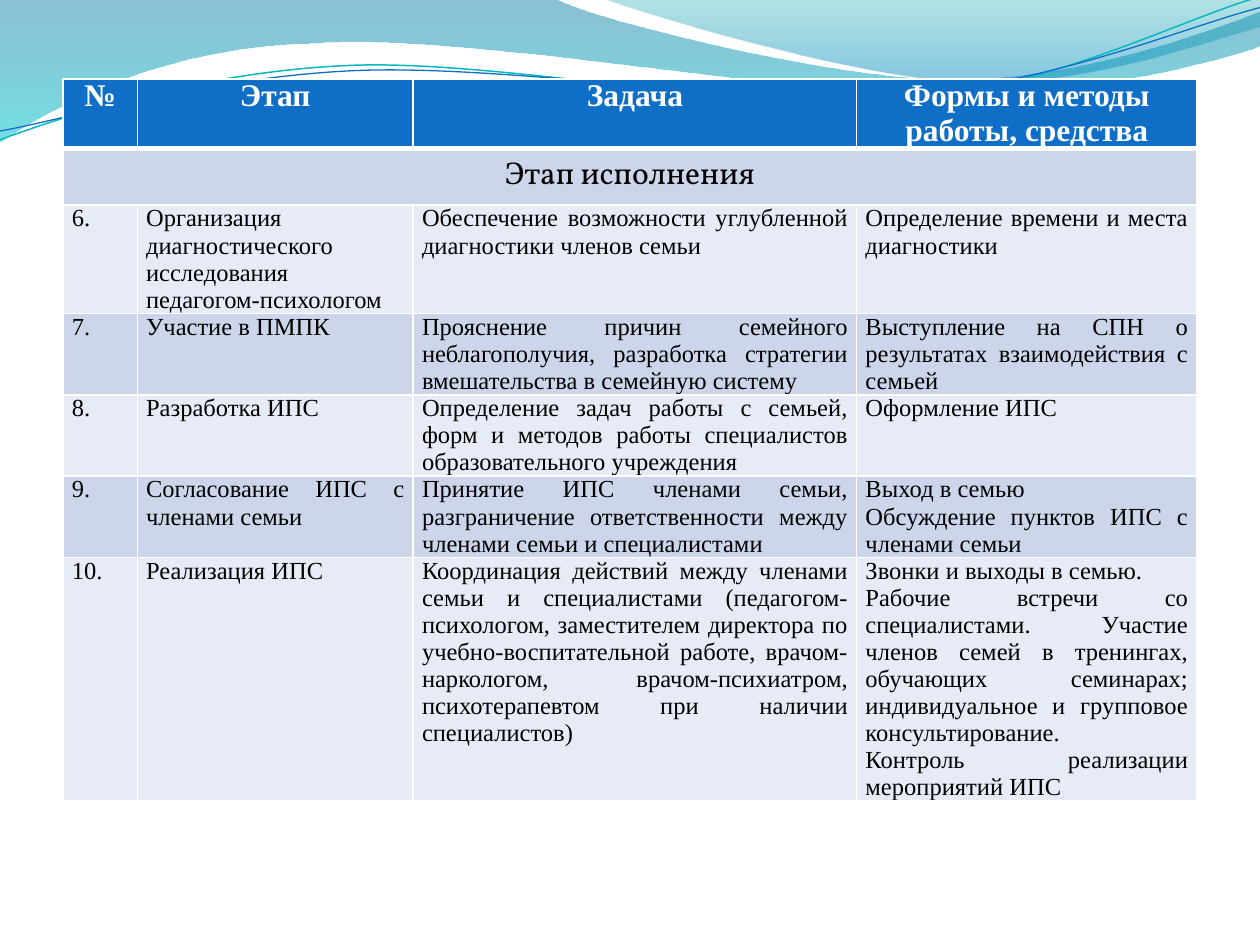
import math

from lxml import etree
from pptx import Presentation
from pptx.dml.color import RGBColor
from pptx.enum import text
from pptx.oxml import ns
from pptx.util import Inches, Pt

THEME = {
    "head_fill": "0F6FC6", "bands": ("CCD5EA", "E7EBF5"),
    "white": "FFFFFF", "black": "000000",
    "font": "Times New Roman", "section_font": "Vollkorn",
    "head_size": 18, "body_size": 14,
}

HEADINGS = ["№", "Этап", "Задача", "Формы и методы работы, средства"]
SECTION = "Этап исполнения"
STAGES = [
    ("6.", "Организация диагностического исследования педагогом-психологом",
     "Обеспечение возможности углубленной диагностики членов семьи",
     "Определение времени и места диагностики"),
    ("7.", "Участие в ПМПК",
     "Прояснение причин семейного неблагополучия, разработка стратегии "
     "вмешательства в семейную систему",
     "Выступление на СПН о результатах взаимодействия с семьей"),
    ("8.", "Разработка ИПС",
     "Определение задач работы с семьей, форм и методов работы специалистов "
     "образовательного учреждения",
     "Оформление ИПС"),
    ("9.", "Согласование ИПС с членами семьи",
     "Принятие ИПС членами семьи, разграничение ответственности между "
     "членами семьи и специалистами",
     "Выход в семью\nОбсуждение пунктов ИПС с членами семьи"),
    ("10.", "Реализация ИПС",
     "Координация действий между членами семьи и специалистами "
     "(педагогом-психологом, заместителем директора по учебно-воспитательной "
     "работе, врачом-наркологом, врачом-психиатром, психотерапевтом при "
     "наличии специалистов)",
     "Звонки и выходы в семью.\n"
     "Рабочие встречи со специалистами. Участие членов семей в тренингах, "
     "обучающих семинарах; индивидуальное и групповое консультирование.\n"
     "Контроль реализации мероприятий ИПС"),
]
TABLE_BOX = (Inches(0.5), Pt(45), Inches(9), Inches(6.14))
COLUMN_WIDTHS = [0.59, 2.19, 3.52, 2.7]
ROW_HEIGHT = 0.41

# Each step is an end point (2 numbers) or a Bezier curve (6 numbers), in inches
# on the slide. Gradient stops are position, colour, opacity in percent.
WAVES = [
    {"box": (-0.01, -0.01, 10.02, 1.14), "start": (0, 0),
     "steps": [(4.4, -0.01), (4.76, 0.17, 6.64, 0.63, 7.58, 0.63),
               (8.53, 0.63, 9.58, 0.26, 10, 0.09), (10.01, 0.36),
               (9.83, 0.44, 8.7, 0.76, 7.46, 0.75),
               (6.22, 0.75, 3.82, 0.28, 2.57, 0.34),
               (1.29, 0.36, 0.46, 0.83, -0.01, 1.13), (0, 0)],
     "gradient": [(0, "0074A1", 45), (1, "00C6CF", 55)]},
    {"box": (4.79, -0.01, 5.21, 0.7), "start": (4.79, -0.01),
     "steps": [(5.09, 0.11, 6.82, 0.62, 7.69, 0.65),
               (8.56, 0.69, 9.61, 0.32, 10, 0.21), (10, 0), (4.79, -0.01)],
     "gradient": [(0, "00A1A9", 30), (0.8, "008BBF", 45)]},
    {"box": (-0.02, 0.22, 10.02, 0.71), "turn": 357.3, "start": (0, 1.11),
     "steps": [(0.48, 0.93, 1.58, 0.57, 2.77, 0.52),
               (3.95, 0.47, 5.93, 0.89, 7.13, 0.8),
               (8.33, 0.71, 9.38, 0.15, 9.98, -0.02)],
     "line": ("0AB8BF", 0.85)},
    {"box": (-0.02, 0.3, 10.03, 0.58), "turn": 357.3, "start": (0, 1.04),
     "steps": [(0.47, 0.96, 1.64, 0.61, 2.83, 0.56),
               (4.03, 0.51, 5.97, 0.84, 7.17, 0.75),
               (8.36, 0.67, 9.41, 0.21, 10, 0.06)],
     "line": ("0F6FC6", 0.75)},
]


def rgb(value):
    return RGBColor.from_string(value)


def draw_curves(shape, wave):
    """Place the shape on its box and give its path true Bezier curves."""
    left, top, width, height = wave["box"]
    angle = math.radians(-wave.get("turn", 0))
    cos, sin = math.cos(angle), math.sin(angle)

    def local(x, y):
        dx, dy = x - left - width / 2, y - top - height / 2
        return (Inches(dx * cos - dy * sin + width / 2),
                Inches(dx * sin + dy * cos + height / 2))

    for side, value in zip(("left", "top", "width", "height"), wave["box"]):
        setattr(shape, side, Inches(value))
    shape.rotation = wave.get("turn", 0)

    outline = shape.element.spPr.find(".//" + ns.qn("a:pathLst"))[0]
    outline.set("w", str(Inches(width)))
    outline.set("h", str(Inches(height)))
    for command, step in zip(list(outline), [wave["start"], *wave["steps"]]):
        tag = command.tag if len(step) == 2 else ns.qn("a:cubicBezTo")
        segment = etree.Element(tag)
        for x, y in zip(step[::2], step[1::2]):
            px, py = local(x, y)
            etree.SubElement(segment, ns.qn("a:pt"), x=str(px), y=str(py))
        outline.replace(command, segment)


def add_wave(slide, wave):
    ends = [(Inches(x), Inches(y)) for *_, x, y in [wave["start"], *wave["steps"]]]
    builder = slide.shapes.build_freeform(*ends[0])
    builder.add_line_segments(ends[1:], close="gradient" in wave)
    shape = builder.convert_to_shape()
    draw_curves(shape, wave)
    shape.shadow.inherit = False
    if "line" in wave:
        color, width = wave["line"]
        shape.fill.background()
        shape.line.color.rgb = rgb(color)
        shape.line.width = Pt(width)
        return
    shape.line.fill.background()
    shape.fill.gradient()
    shape.fill.gradient_angle = 270
    for stop, (position, color, _) in zip(shape.fill.gradient_stops, wave["gradient"]):
        stop.position = position
        stop.color.rgb = rgb(color)
    colors = shape.element.spPr.findall(".//" + ns.qn("a:gs") + "/" + ns.qn("a:srgbClr"))
    for node, (_, _, opacity) in zip(colors, wave["gradient"]):
        etree.SubElement(node, ns.qn("a:alpha"), val=str(opacity * 1000))


def set_borders(cell, widths):
    properties = cell._tc.get_or_add_tcPr()
    for index, (side, width) in enumerate(widths.items()):
        line = etree.Element(ns.qn(f"a:ln{side}"), w=str(Pt(width)))
        fill = etree.SubElement(line, ns.qn("a:solidFill"))
        etree.SubElement(fill, ns.qn("a:srgbClr"), val=THEME["white"])
        properties.insert(index, line)


def fill_cell(cell, content, fill, align, **font):
    cell.text = content
    cell.fill.solid()
    cell.fill.fore_color.rgb = rgb(fill)
    for paragraph in cell.text_frame.paragraphs:
        paragraph.alignment = align
        for run in paragraph.runs:
            run.font.color.rgb = rgb(font["color"])
            for name in ("name", "size", "bold"):
                setattr(run.font, name, font[name])


def tighten(cell):
    cell.margin_left = cell.margin_right = Inches(0.07)
    cell.margin_top = cell.margin_bottom = 0


def add_stage_table(slide):
    frame = slide.shapes.add_table(len(STAGES) + 2, len(HEADINGS), *TABLE_BOX)
    table = frame.table
    for column, width in zip(table.columns, COLUMN_WIDTHS):
        column.width = Inches(width)
    for row in table.rows:
        row.height = Inches(ROW_HEIGHT)
    frame.height = TABLE_BOX[3]

    center, justify = text.PP_ALIGN.CENTER, text.PP_ALIGN.JUSTIFY
    head = {"name": THEME["font"], "size": Pt(THEME["head_size"]),
            "bold": True, "color": THEME["white"]}
    section = {**head, "name": THEME["section_font"], "bold": False,
               "color": THEME["black"]}
    body = {**section, "name": THEME["font"], "size": Pt(THEME["body_size"])}

    for column, heading in enumerate(HEADINGS):
        cell = table.cell(0, column)
        fill_cell(cell, heading, THEME["head_fill"], center, **head)
        tighten(cell)
        set_borders(cell, {"L": 1, "R": 1, "T": 1, "B": 3})

    table.cell(1, 0).merge(table.cell(1, len(HEADINGS) - 1))
    fill_cell(table.cell(1, 0), SECTION, THEME["bands"][0], center, **section)

    for number, stage in enumerate(STAGES):
        for column, content in enumerate(stage):
            cell = table.cell(number + 2, column)
            fill_cell(cell, content, THEME["bands"][(number + 1) % 2], justify, **body)
            tighten(cell)


def main():
    deck = Presentation()
    deck.slide_width, deck.slide_height = Inches(10), Inches(7.5)
    slide = deck.slides.add_slide(deck.slide_layouts[6])
    for wave in WAVES:
        add_wave(slide, wave)
    add_stage_table(slide)
    deck.save("out.pptx")


if __name__ == "__main__":
    main()
